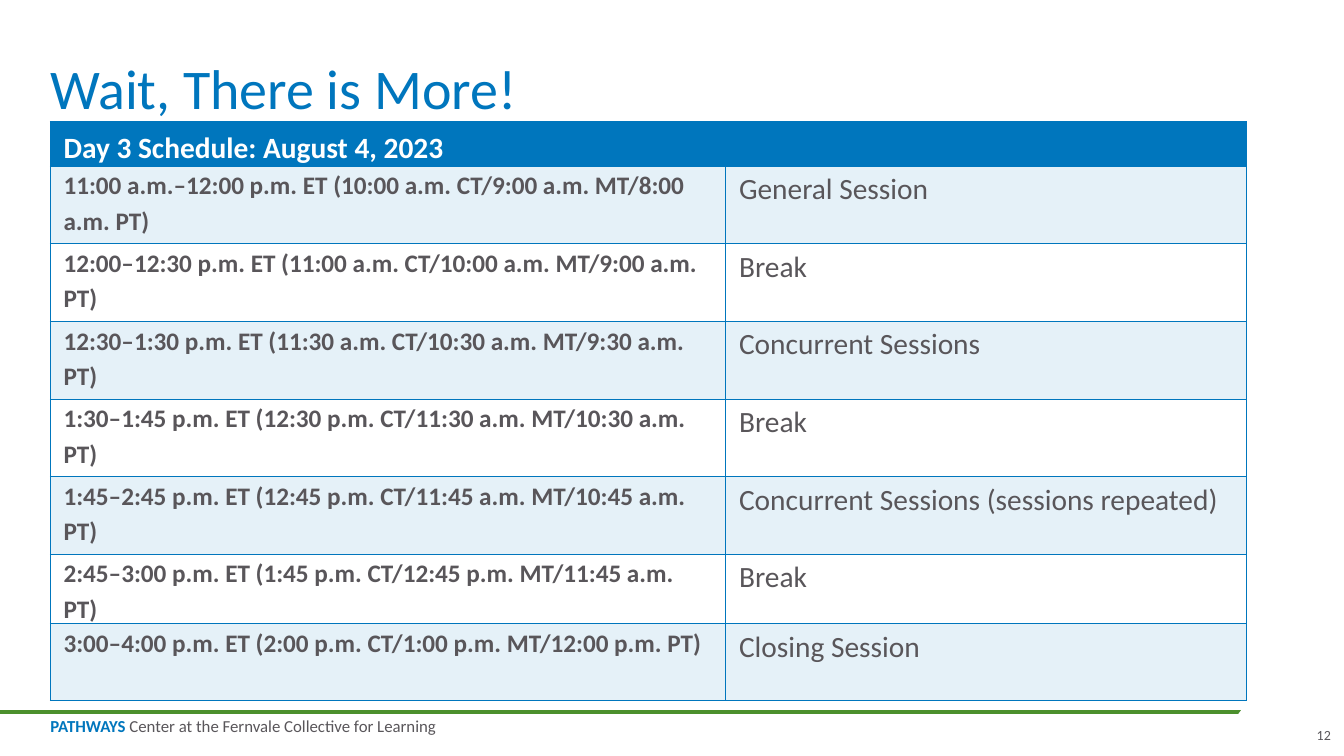
from lxml import etree
from pptx import Presentation
from pptx import util as u
from pptx.dml.color import RGBColor
from pptx.enum import shapes, text
from pptx.oxml import ns

PX = 9144  # 100 px to the inch
COLORS = {"blue": "0076BD", "pale": "E5F1F8", "white": "FFFFFF",
          "gray": "59565A", "green": "4C902D"}

SCHEDULE = [
    ("11:00 a.m.–12:00 p.m. ET (10:00 a.m. CT/9:00 a.m. MT/8:00 a.m. PT)", "General Session"),
    ("12:00–12:30 p.m. ET (11:00 a.m. CT/10:00 a.m. MT/9:00 a.m. PT)", "Break"),
    ("12:30–1:30 p.m. ET (11:30 a.m. CT/10:30 a.m. MT/9:30 a.m. PT)", "Concurrent Sessions"),
    ("1:30–1:45 p.m. ET (12:30 p.m. CT/11:30 a.m. MT/10:30 a.m. PT)", "Break"),
    ("1:45–2:45 p.m. ET (12:45 p.m. CT/11:45 a.m. MT/10:45 a.m. PT)",
     "Concurrent Sessions (sessions repeated)"),
    ("2:45–3:00 p.m. ET (1:45 p.m. CT/12:45 p.m. MT/11:45 a.m. PT)", "Break"),
    ("3:00–4:00 p.m. ET (2:00 p.m. CT/1:00 p.m. MT/12:00 p.m. PT)", "Closing Session"),
]


def color(name):
    return RGBColor.from_string(COLORS[name])


def px(*lengths):
    return [u.Emu(length * PX) for length in lengths]


def add_text(paragraph, words, size, ink="gray", bold=False, line=None, after=None,
             align=text.PP_ALIGN.LEFT):
    paragraph.alignment = align
    if line:
        paragraph.line_spacing = line
    if after is not None:
        paragraph.space_after = u.Pt(after)
    run = paragraph.add_run()
    run.text = words
    run.font.name = "Calibri"
    run.font.size = u.Pt(size)
    run.font.bold = bold
    run.font.color.rgb = color(ink)


def set_frame(frame, anchor, wrap=True):
    frame.margin_left = frame.margin_right = frame.margin_top = frame.margin_bottom = 0
    frame.vertical_anchor = anchor
    frame.word_wrap = wrap
    return frame.paragraphs[0]


def style_cell(cell, fill, anchor=text.MSO_ANCHOR.TOP):
    cell.margin_left, cell.margin_right = px(13, 13)
    cell.margin_top = cell.margin_bottom = 0
    cell.vertical_anchor = anchor
    cell.fill.solid()
    cell.fill.fore_color.rgb = color(fill)
    # Borders come before the fill in the cell properties
    properties = cell._tc.get_or_add_tcPr()
    for index, side in enumerate(("lnL", "lnR", "lnT", "lnB")):
        border = etree.Element(ns.qn("a:" + side), w=str(u.Pt(0.75)))
        solid = etree.SubElement(border, ns.qn("a:solidFill"))
        etree.SubElement(solid, ns.qn("a:srgbClr"), val=COLORS["blue"])
        properties.insert(index, border)


def add_title(slide, left, top, width, height):
    title = slide.shapes.title
    title.left, title.top, title.width, title.height = px(left, top, width, height)
    paragraph = set_frame(title.text_frame, text.MSO_ANCHOR.BOTTOM)
    add_text(paragraph, "Wait, There is More!", 40, "blue", line=0.9)


def add_schedule(slide, left, top, width, height):
    rows = len(SCHEDULE) + 1
    table = slide.shapes.add_table(rows, 2, *px(left, top, width, height)).table
    table.columns[0].width, table.columns[1].width = px(670, width - 670)
    for row, row_height in zip(table.rows, px(44, *[77] * 5, 66, 76)):
        row.height = row_height

    # Header across both columns
    for cell in table.rows[0].cells:
        style_cell(cell, "blue", text.MSO_ANCHOR.BOTTOM)
    header = table.cell(0, 0)
    header.merge(table.cell(0, 1))
    add_text(header.text_frame.paragraphs[0], "Day 3 Schedule: August 4, 2023",
             21, "white", bold=True, line=1.15, after=6)

    # Banded sessions
    for number, session in enumerate(SCHEDULE, 1):
        for column, words in enumerate(session):
            cell = table.cell(number, column)
            style_cell(cell, "pale" if number % 2 else "white")
            add_text(cell.text_frame.paragraphs[0], words, 21 if column else 18,
                     bold=column == 0, line=1.15, after=3)


def add_footer(slide, left, top, width, height):
    # Green rule with its end cut off by a tilted white ellipse
    rule = slide.shapes.add_connector(shapes.MSO_CONNECTOR.STRAIGHT,
                                      *px(left, top, left + 1300, top))
    rule.line.color.rgb = color("green")
    rule.line.width = u.Pt(3)
    etree.SubElement(rule._element.spPr, ns.qn("a:effectLst"))
    ellipse = slide.shapes.add_shape(shapes.MSO_SHAPE.OVAL,
                                     *px(left + 1216, top - 29, 119, 58))
    ellipse.rotation = 332.1
    ellipse.shadow.inherit = False
    ellipse.fill.solid()
    ellipse.fill.fore_color.rgb = color("white")
    ellipse.line.fill.background()

    # Center name
    name = slide.shapes.add_textbox(*px(left + 50, top + 7, 402, 17))
    paragraph = set_frame(name.text_frame, text.MSO_ANCHOR.TOP, wrap=False)
    add_text(paragraph, "PATHWAYS", 12, "blue", bold=True, line=0.85)
    add_text(paragraph, " Center at the Fernvale Collective for Learning", 12, line=0.85)

    # Slide number
    number = slide.shapes.add_textbox(*px(left + width - 30, top + height - 27, 17, 17))
    paragraph = set_frame(number.text_frame, text.MSO_ANCHOR.BOTTOM, wrap=False)
    add_text(paragraph, "12", 10, after=6, align=text.PP_ALIGN.RIGHT)


def main():
    presentation = Presentation()
    presentation.slide_width, presentation.slide_height = px(1333, 750)
    slide = presentation.slides.add_slide(presentation.slide_layouts.get_by_name("Title Only"))
    add_footer(slide, 0, 706, 1333, 41)
    add_title(slide, 50, 0, 1240, 121)
    add_schedule(slide, 50, 121, 1186, 571)
    presentation.save("out.pptx")


if __name__ == "__main__":
    main()
